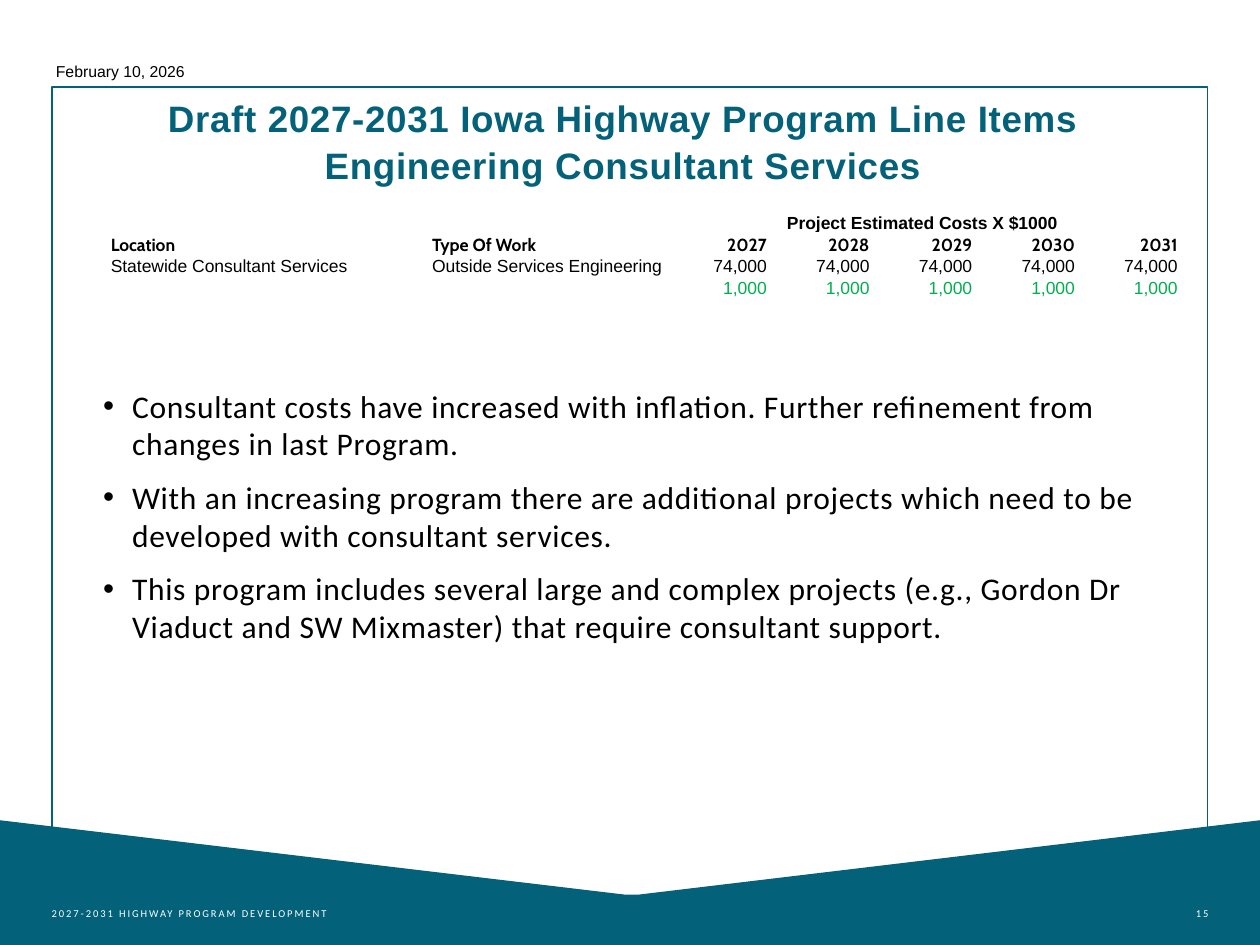
from dataclasses import dataclass

from lxml.etree import SubElement
from pptx import Presentation
from pptx.dml.color import RGBColor
from pptx.enum.shapes import MSO_SHAPE as Preset
from pptx.enum.text import MSO_ANCHOR as Anchor, MSO_AUTO_SIZE as AutoSize, PP_ALIGN as Align
from pptx.oxml.ns import qn
from pptx.util import Pt


@dataclass(frozen=True)
class Theme:
    teal = RGBColor(0x03, 0x61, 0x7A)
    green = RGBColor(0x00, 0xB0, 0x50)
    black = RGBColor(0, 0, 0)
    white = RGBColor(255, 255, 255)
    sans = "Arial"
    body = "Calibri"
    heading = "Cabin"
    title_size = 21
    body_size = 18
    table_size = 10
    date_size = 9
    footer_size = 6


theme = Theme()

TITLE = ["Draft 2027-2031 Iowa Highway Program Line Items",
         "Engineering Consultant Services"]
BULLETS = [
    "Consultant costs have increased with inflation. Further refinement from "
    "changes in last Program.",
    "With an increasing program there are additional projects which need to be "
    "developed with consultant services.",
    "This program includes several large and complex projects (e.g., Gordon Dr "
    "Viaduct and SW Mixmaster) that require consultant support.",
]
YEARS = ["2027", "2028", "2029", "2030", "2031"]
COST_ROWS = [
    ["", "", "Project Estimated Costs X $1000", "", "", "", ""],
    ["Location", "Type Of Work", *YEARS],
    ["Statewide Consultant Services", "Outside Services Engineering", *["74,000"] * 5],
    ["", "", *["1,000"] * 5],
]


def format_paragraph(paragraph, font, size, color, bold=False, align=Align.LEFT, tracking=0):
    """Style every run; tracking is in points."""
    paragraph.alignment = align
    for run in paragraph.runs:
        run.font.name, run.font.size, run.font.bold = font, Pt(size), bold
        run.font.color.rgb = color
        if tracking:
            run.font._element.set("spc", str(round(tracking * 100)))


def set_up_frame(text_frame, left=0, top=3.6, right=0, bottom=3.6, anchor=Anchor.TOP, wrap=True):
    text_frame.word_wrap = wrap
    text_frame.auto_size = AutoSize.NONE
    text_frame.vertical_anchor = anchor
    text_frame.margin_left, text_frame.margin_right = Pt(left), Pt(right)
    text_frame.margin_top, text_frame.margin_bottom = Pt(top), Pt(bottom)


def add_text_box(slide, box, text, **frame_options):
    text_frame = slide.shapes.add_textbox(*map(Pt, box)).text_frame
    set_up_frame(text_frame, **frame_options)
    text_frame.text = text
    return text_frame


def add_frame(slide, box):
    frame = slide.shapes.add_shape(Preset.RECTANGLE, *map(Pt, box))
    frame.shadow.inherit = False
    frame.fill.background()
    frame.line.color.rgb = theme.teal
    frame.line.width = Pt(1)


def add_footer(slide, box):
    left, top, width, height = box
    right, bottom = left + width, top + height
    # Band with a shallow notch in its upper edge
    notch = top + 42.5
    builder = slide.shapes.build_freeform(Pt(left), Pt(top))
    outline = [(left + 357, notch), (left + 365, notch), (right, top),
               (right, bottom), (left, bottom)]
    builder.add_line_segments([(Pt(x), Pt(y)) for x, y in outline], close=True)
    band = builder.convert_to_shape()
    band.shadow.inherit = False
    band.fill.solid()
    band.fill.fore_color.rgb = theme.teal
    band.line.fill.background()

    # Program name and page number
    labels = [("2027-2031 HIGHWAY PROGRAM DEVELOPMENT", left + 29.5, 192, Align.LEFT),
              ("15", right - 99.5, 70, Align.RIGHT)]
    for text, label_left, label_width, align in labels:
        text_frame = add_text_box(slide, (label_left, bottom - 39.6, label_width, 28.8),
                                  text, anchor=Anchor.BOTTOM)
        format_paragraph(text_frame.paragraphs[0], theme.body, theme.footer_size,
                         theme.white, align=align, tracking=1.1)


def add_date(slide, box):
    text_frame = add_text_box(slide, box, "February 10, 2026", wrap=False)
    format_paragraph(text_frame.paragraphs[0], theme.sans, theme.date_size,
                     theme.black, align=Align.CENTER)


def place_title(slide, box):
    title = slide.shapes.title
    title.left, title.top, title.width, title.height = map(Pt, box)
    set_up_frame(title.text_frame, right=7.2)
    title.text_frame.text = "\n".join(TITLE)
    for index, paragraph in enumerate(title.text_frame.paragraphs):
        paragraph.space_before = Pt(1.5 if index else 0)
        format_paragraph(paragraph, theme.sans, theme.title_size, theme.teal,
                         bold=True, align=Align.CENTER, tracking=0.4)


def add_cost_table(slide, box):
    table = slide.shapes.add_table(len(COST_ROWS), len(COST_ROWS[0]), *map(Pt, box)).table
    table.first_row = table.horz_banding = False
    for column, width in zip(table.columns, [183.6, 134, *[58.7] * 5]):
        column.width = Pt(width)
    for row, height in zip(table.rows, [13.7, *[12.4] * 3]):
        row.height = Pt(height)

    for row_index, values in enumerate(COST_ROWS):
        for column_index, value in enumerate(values):
            cell = table.cell(row_index, column_index)
            cell.fill.solid()
            cell.fill.fore_color.rgb = theme.white
            cell.margin_left = cell.margin_right = cell.margin_top = Pt(0.72)
            cell.margin_bottom = 0
            cell.text = value
            paragraph = cell.text_frame.paragraphs[0]
            if not value:
                # Keep empty cells from stretching their row
                SubElement(paragraph._p, qn("a:endParaRPr"), sz=str(theme.table_size * 100))
            format_paragraph(paragraph,
                             theme.heading if row_index == 1 else theme.sans,
                             theme.table_size,
                             theme.green if row_index == 3 else theme.black,
                             bold=row_index < 2,
                             align=Align.RIGHT if column_index > 1 else Align.LEFT)

    # Heading across the year columns
    heading = table.cell(0, 2)
    heading.merge(table.cell(0, 6))
    heading.vertical_anchor = Anchor.BOTTOM
    heading.text_frame.paragraphs[0].alignment = Align.CENTER


def add_bullets(slide, box):
    text_frame = add_text_box(slide, box, "\n".join(BULLETS), right=7.2)
    for index, paragraph in enumerate(text_frame.paragraphs):
        properties = paragraph._p.get_or_add_pPr()
        properties.set("marL", str(Pt(16.5)))
        properties.set("indent", str(-Pt(16.5)))
        SubElement(properties, qn("a:buFont"), typeface=theme.sans)
        SubElement(properties, qn("a:buChar"), char="•")
        paragraph.space_before = Pt(9 if index else 0)
        format_paragraph(paragraph, theme.body, theme.body_size, theme.black, tracking=0.4)


def main():
    presentation = Presentation()
    presentation.slide_width, presentation.slide_height = Pt(720), Pt(540)
    slide = presentation.slides.add_slide(presentation.slide_layouts[5])
    add_frame(slide, (29.5, 49.7, 660.5, 479.5))
    add_footer(slide, (0, 468.7, 720, 71.3))
    add_date(slide, (23, 31.7, 91.5, 18))
    place_title(slide, (59, 51.1, 601.2, 59.8))
    add_cost_table(slide, (62.6, 119.5, 611.1, 50.9))
    add_bullets(slide, (59, 217.4, 601.2, 221.8))
    presentation.save("out.pptx")


if __name__ == "__main__":
    main()
